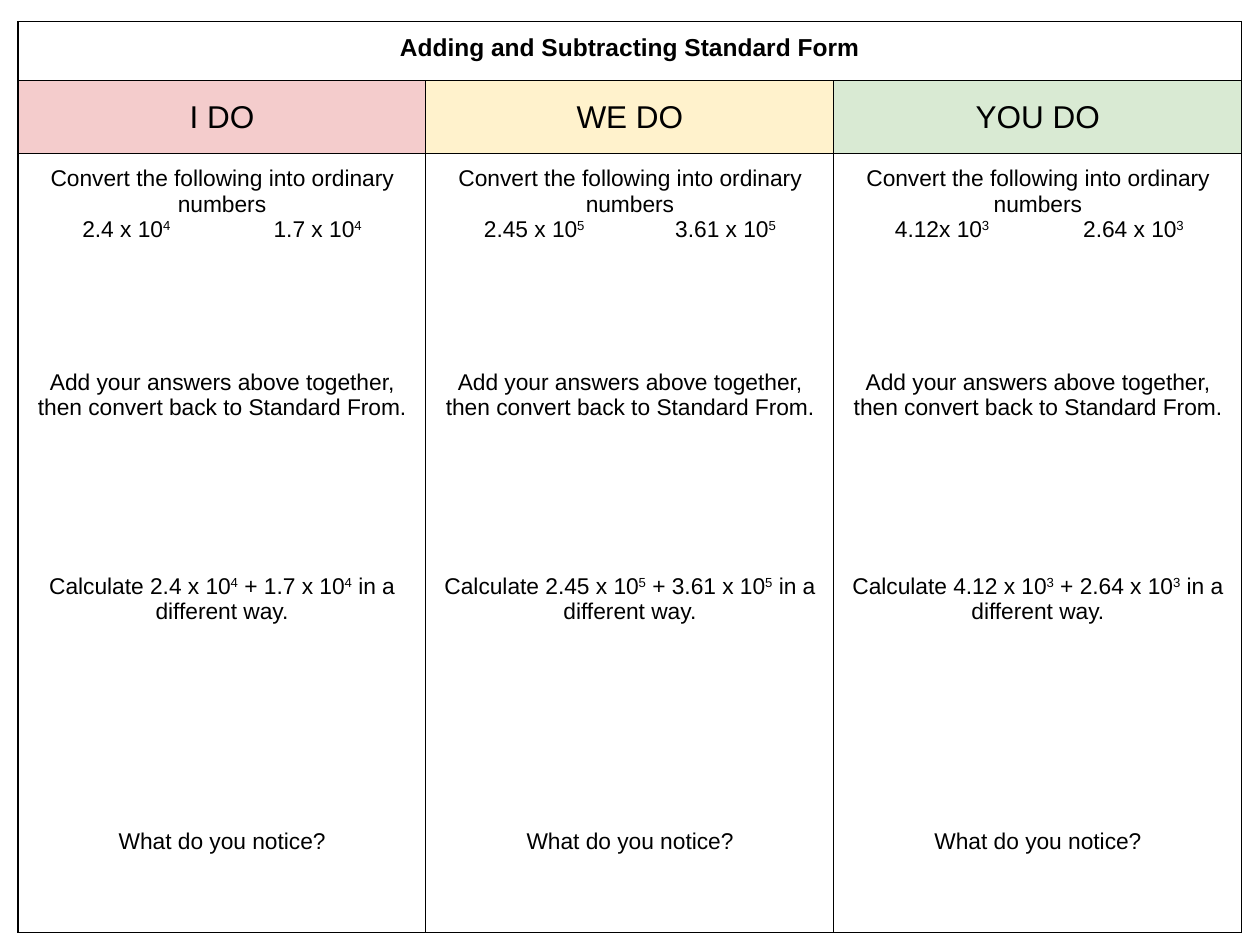
from dataclasses import dataclass
from typing import Optional

from lxml import etree
from pptx import Presentation
from pptx import util as u
from pptx.dml.color import RGBColor
from pptx.enum import text
from pptx.oxml import ns


@dataclass(frozen=True)
class Theme:
    font: str = "Arial"
    ink: str = "000000"
    paper: str = "FFFFFF"
    title_size: float = 14
    heading_size: float = 18
    body_size: float = 13
    inset: float = 7.2
    border: float = 0.75


@dataclass(frozen=True)
class Stage:
    heading: str
    fill: str
    first: str
    second: str
    calculation: str


@dataclass(frozen=True)
class Line:
    words: str
    size: float
    bold: bool = False
    before: float = 0
    tabs: tuple[float, ...] = ()


THEME = Theme()
LEFT, TOP = 10.3, 12.2
COLUMN_WIDTH = 233.1
ROW_HEIGHTS = (34, 41.5, 445)
TITLE = "Adding and Subtracting Standard Form"
STAGES = (
    Stage("I DO", "F4CCCC", "2.4 x 10^4", "1.7 x 10^4", "2.4 x 10^4 + 1.7 x 10^4"),
    Stage("WE DO", "FFF2CC", "2.45 x 10^5", "3.61 x 10^5", "2.45 x 10^5 + 3.61 x 10^5"),
    Stage("YOU DO", "D9EAD3", "4.12x 10^3", "2.64 x 10^3", "4.12 x 10^3 + 2.64 x 10^3"),
)


def add_span(para, words: str, line: Line, raised: bool = False) -> None:
    """Add one run, raised when it is an exponent."""
    if not words:
        return
    span = para.add_run()
    span.text = words
    formats = {"name": THEME.font, "size": u.Pt(line.size), "bold": line.bold}
    for name, value in formats.items():
        setattr(span.font, name, value)
    span.font.color.rgb = RGBColor.from_string(THEME.ink)
    if raised:
        span._r.get_or_add_rPr().set("baseline", "30000")


def write_line(para, line: Line) -> None:
    """Write a paragraph; the digit after each ^ is an exponent."""
    align = text.PP_ALIGN.LEFT if line.tabs else text.PP_ALIGN.CENTER
    formats = {"alignment": align, "space_before": u.Pt(line.before)}
    for name, value in formats.items():
        setattr(para, name, value)
    if line.tabs:
        stops = etree.SubElement(para._p.get_or_add_pPr(), ns.qn("a:tabLst"))
        for position in line.tabs:
            etree.SubElement(stops, ns.qn("a:tab"), pos=str(u.Pt(position)), algn="ctr")
    start, *powers = line.words.split("^")
    add_span(para, start, line)
    for power in powers:
        add_span(para, power[0], line, raised=True)
        add_span(para, power[1:], line)


def add_borders(cell) -> None:
    """Draw all four sides; borders come before the fill in the XML."""
    properties = cell._tc.get_or_add_tcPr()
    for index, side in enumerate(("a:lnL", "a:lnR", "a:lnT", "a:lnB")):
        border = etree.Element(ns.qn(side), w=str(u.Pt(THEME.border)))
        fill = etree.SubElement(border, ns.qn("a:solidFill"))
        etree.SubElement(fill, ns.qn("a:srgbClr"), val=THEME.ink)
        properties.insert(index, border)


def fill_cell(cell, lines: list[Line], fill: Optional[str] = None, middle: bool = False) -> None:
    """Format a cell and write its paragraphs."""
    formats = {f"margin_{side}": u.Pt(THEME.inset) for side in ("left", "right", "top", "bottom")}
    formats["vertical_anchor"] = text.MSO_ANCHOR.MIDDLE if middle else text.MSO_ANCHOR.TOP
    for name, value in formats.items():
        setattr(cell, name, value)
    cell.fill.solid()
    cell.fill.fore_color.rgb = RGBColor.from_string(fill or THEME.paper)
    add_borders(cell)
    frame = cell.text_frame
    for index, line in enumerate(lines):
        write_line(frame.add_paragraph() if index else frame.paragraphs[0], line)


def task_lines(stage: Stage) -> list[Line]:
    """List the tasks of a stage, with working space before each."""
    size = THEME.body_size
    inner = COLUMN_WIDTH - 2 * THEME.inset
    return [
        Line("Convert the following into ordinary numbers", size),
        Line(f"\t{stage.first}\t{stage.second}", size, tabs=(inner / 4, inner * 3 / 4)),
        Line("Add your answers above together, then convert back to Standard From.",
             size, before=73),
        Line(f"Calculate {stage.calculation} in a different way.", size, before=87.5),
        Line("What do you notice?", size, before=116.5),
    ]


def main() -> None:
    deck = Presentation()
    deck.slide_width, deck.slide_height = u.Pt(720), u.Pt(540)
    page = deck.slides.add_slide(deck.slide_layouts[6])

    # Grid
    box = page.shapes.add_table(
        len(ROW_HEIGHTS), len(STAGES), u.Pt(LEFT), u.Pt(TOP),
        u.Pt(COLUMN_WIDTH * len(STAGES)), u.Pt(sum(ROW_HEIGHTS)))
    table = box.table
    table.first_row = table.horz_banding = False
    for row, height in zip(table.rows, ROW_HEIGHTS):
        row.height = u.Pt(height)
    for column in table.columns:
        column.width = u.Pt(COLUMN_WIDTH)

    # Title across all columns
    table.cell(0, 0).merge(table.cell(0, len(STAGES) - 1))
    for index in range(len(STAGES)):
        lines = [] if index else [Line(TITLE, THEME.title_size, bold=True)]
        fill_cell(table.cell(0, index), lines)

    # One column for each stage
    for index, stage in enumerate(STAGES):
        heading = Line(stage.heading, THEME.heading_size)
        fill_cell(table.cell(1, index), [heading], stage.fill, middle=True)
        fill_cell(table.cell(2, index), task_lines(stage))

    deck.save("out.pptx")


if __name__ == "__main__":
    main()
